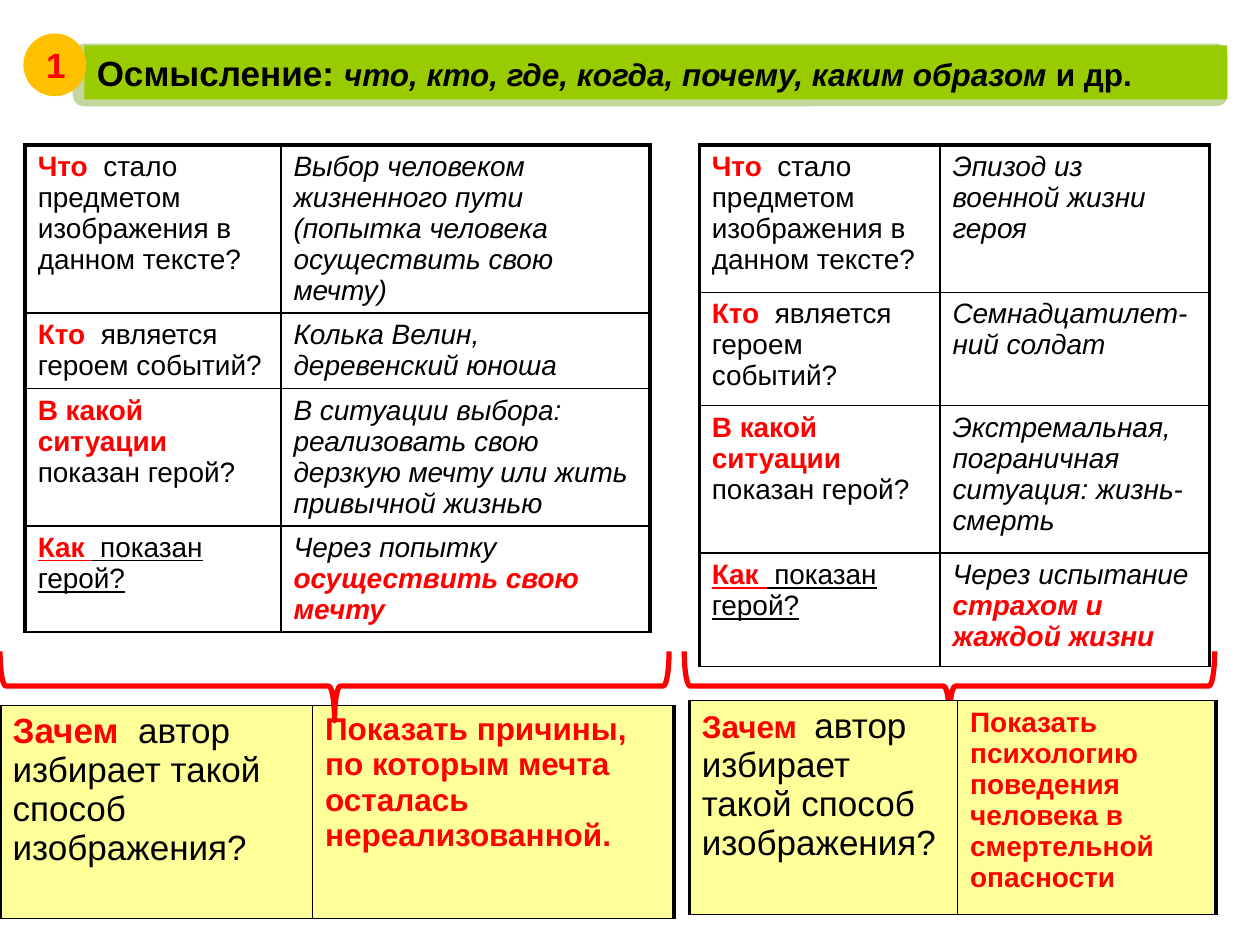
from lxml.etree import SubElement
from pptx import Presentation
from pptx.dml.color import RGBColor
from pptx.enum.shapes import MSO_SHAPE
from pptx.enum.text import MSO_ANCHOR, MSO_AUTO_SIZE, PP_ALIGN
from pptx.oxml.ns import qn
from pptx.util import Inches, Pt

BLACK, RED, YELLOW, WHITE = "000000", "FF0000", "FFFF99", "FFFFFF"
KEY = {"bold": True, "color": RED}
KEY_LINED = {**KEY, "underline": True}
KEY_ITALIC = {**KEY, "italic": True}
ITALIC = {"italic": True}
LINED = {"underline": True}
THICK, THIN = 2.25, 1


def color(value):
    return RGBColor.from_string(value)


class SlideBuilder:
    font_name = "Arial"

    def __init__(self, slide):
        self.slide = slide

    def add_text(self, frame, runs, size):
        """Fill the first paragraph with (text, format) pairs."""
        paragraph = frame.paragraphs[0]
        for text, style in runs:
            run = paragraph.add_run()
            run.text = text
            values = {"name": self.font_name, "size": size, "bold": False, **style}
            run.font.color.rgb = color(values.pop("color", BLACK))
            values["size"] = Pt(values["size"])
            for name, value in values.items():
                setattr(run.font, name, value)
        return paragraph

    def shape(self, kind, box, fill=None, line=None, width=2):
        shape = self.slide.shapes.add_shape(kind, *map(Inches, box))
        shape.shadow.inherit = False
        if fill:
            shape.fill.solid()
            shape.fill.fore_color.rgb = color(fill)
        else:
            shape.fill.background()
        if line:
            shape.line.color.rgb = color(line)
            shape.line.width = Pt(width)
        else:
            shape.line.fill.background()
        return shape

    def brace(self, left, top, length, depth):
        """Draw a brace that opens upwards over the given area."""
        box = (left + (length - depth) / 2, top + (depth - length) / 2, depth, length)
        brace = self.shape(MSO_SHAPE.RIGHT_BRACE, box, line=RED, width=3)
        brace.rotation = 90

    def borders(self, cell, widths):
        properties = cell._tc.get_or_add_tcPr()
        for index, (side, width) in enumerate(widths.items()):
            line = SubElement(properties, qn(f"a:ln{side}"), w=str(Pt(width)))
            fill = SubElement(line, qn("a:solidFill"))
            SubElement(fill, qn("a:srgbClr"), val=BLACK)
            properties.insert(index, line)

    def table(self, left, top, columns, heights, rows, size, fill, top_width):
        frame = self.slide.shapes.add_table(
            len(rows), len(columns), Inches(left), Inches(top),
            Inches(sum(columns)), Inches(sum(heights)))
        table = frame.table
        table.first_row = table.horz_banding = False
        for column, width in zip(table.columns, columns):
            column.width = Inches(width)
        for row, height in zip(table.rows, heights):
            row.height = Inches(height)
        last = len(columns) - 1
        for row_index, row in enumerate(rows):
            for column_index, runs in enumerate(row):
                cell = table.cell(row_index, column_index)
                cell.fill.solid()
                cell.fill.fore_color.rgb = color(fill)
                self.add_text(cell.text_frame, runs, size).space_before = Pt(6)
                self.borders(cell, {
                    "L": THICK if column_index == 0 else THIN,
                    "R": THICK if column_index == last else THIN,
                    "T": top_width if row_index == 0 else THIN,
                    "B": THIN})

    def title(self, box, runs):
        shape = self.shape(MSO_SHAPE.RECTANGLE, box, "99CC00")
        frame = shape.text_frame
        frame.word_wrap = True
        frame.vertical_anchor = MSO_ANCHOR.TOP
        frame.auto_size = MSO_AUTO_SIZE.SHAPE_TO_FIT_TEXT
        paragraph = self.add_text(frame, runs, 18)
        layout = {"alignment": PP_ALIGN.LEFT, "space_before": Pt(6), "space_after": Pt(6)}
        for name, value in layout.items():
            setattr(paragraph, name, value)
        properties = paragraph._p.get_or_add_pPr()
        properties.set("marL", str(Inches(0.5)))
        properties.set("indent", str(Inches(-0.5)))

    def badge(self, box, text):
        shape = self.shape(MSO_SHAPE.FLOWCHART_CONNECTOR, box, "FFC000", "FFC000")
        shape.text_frame.vertical_anchor = MSO_ANCHOR.MIDDLE
        self.add_text(shape.text_frame, [(text, KEY)], 20).alignment = PP_ALIGN.CENTER


QUESTIONS = [
    [("Что  ", KEY), ("стало предметом изображения в данном тексте?", {})],
    [("Кто  ", KEY), ("является героем событий?", {})],
    [("В какой ситуации  ", KEY), ("показан герой?", {})],
    [("Как ", KEY_LINED), (" показан герой?", LINED)],
]
DREAM_ANSWERS = [
    [("Выбор человеком жизненного пути (попытка человека осуществить свою мечту)", ITALIC)],
    [("Колька Велин, деревенский юноша", ITALIC)],
    [("В ситуации выбора: реализовать свою дерзкую мечту или жить привычной жизнью", ITALIC)],
    [("Через попытку ", ITALIC), ("осуществить свою мечту", KEY_ITALIC)],
]
WAR_ANSWERS = [
    [("Эпизод из военной жизни героя", ITALIC)],
    [("Семнадцатилет-ний солдат", ITALIC)],
    [("Экстремальная, пограничная ситуация: жизнь-смерть", ITALIC)],
    [("Через испытание ", ITALIC), ("страхом и жаждой жизни", KEY_ITALIC)],
]


def purpose_row(key_size, answer, answer_size):
    return [[
        [("Зачем  ", {**KEY, "size": key_size}),
         ("автор избирает такой способ изображения?", {})],
        [(answer, {**KEY, "size": answer_size})],
    ]]


def main():
    presentation = Presentation()
    presentation.slide_width, presentation.slide_height = Inches(10), Inches(7.5)
    builder = SlideBuilder(presentation.slides.add_slide(presentation.slide_layouts[6]))

    builder.table(0.2, 1.15, (2.03, 2.93), (1.33, 0.6, 1.09, 0.84),
                  list(zip(QUESTIONS, DREAM_ANSWERS)), 16, WHITE, THICK)
    builder.shape(MSO_SHAPE.ROUNDED_RECTANGLE, (0.59, 0.36, 9.14, 0.47), "C3D69B", "C3D69B")
    builder.title((0.67, 0.36, 9.07, 0.43), [
        ("Осмысление: ", {"bold": True, "size": 20}),
        ("что, кто, где, когда, почему, каким образом", {"bold": True, "italic": True}),
        (" и др.", {"bold": True})])
    builder.badge((0.2, 0.28, 0.47, 0.47), "1")
    builder.table(0, 5.6, (2.48, 2.87), (1.69,), purpose_row(
        20, "Показать причины, по которым мечта осталась нереализованной.", 18),
        20, YELLOW, THIN)
    builder.brace(0, 5.17, 5.31, 0.55)
    builder.table(5.55, 1.15, (1.91, 2.14), (1.17, 0.9, 1.17, 0.9),
                  list(zip(QUESTIONS, WAR_ANSWERS)), 16, WHITE, THICK)
    builder.brace(5.43, 5.17, 4.21, 0.55)
    builder.table(5.47, 5.56, (2.13, 2.05), (1.7,), purpose_row(
        18, "Показать психологию поведения человека в смертельной опасности", 16),
        20, YELLOW, THIN)
    presentation.save("out.pptx")


if __name__ == "__main__":
    main()
